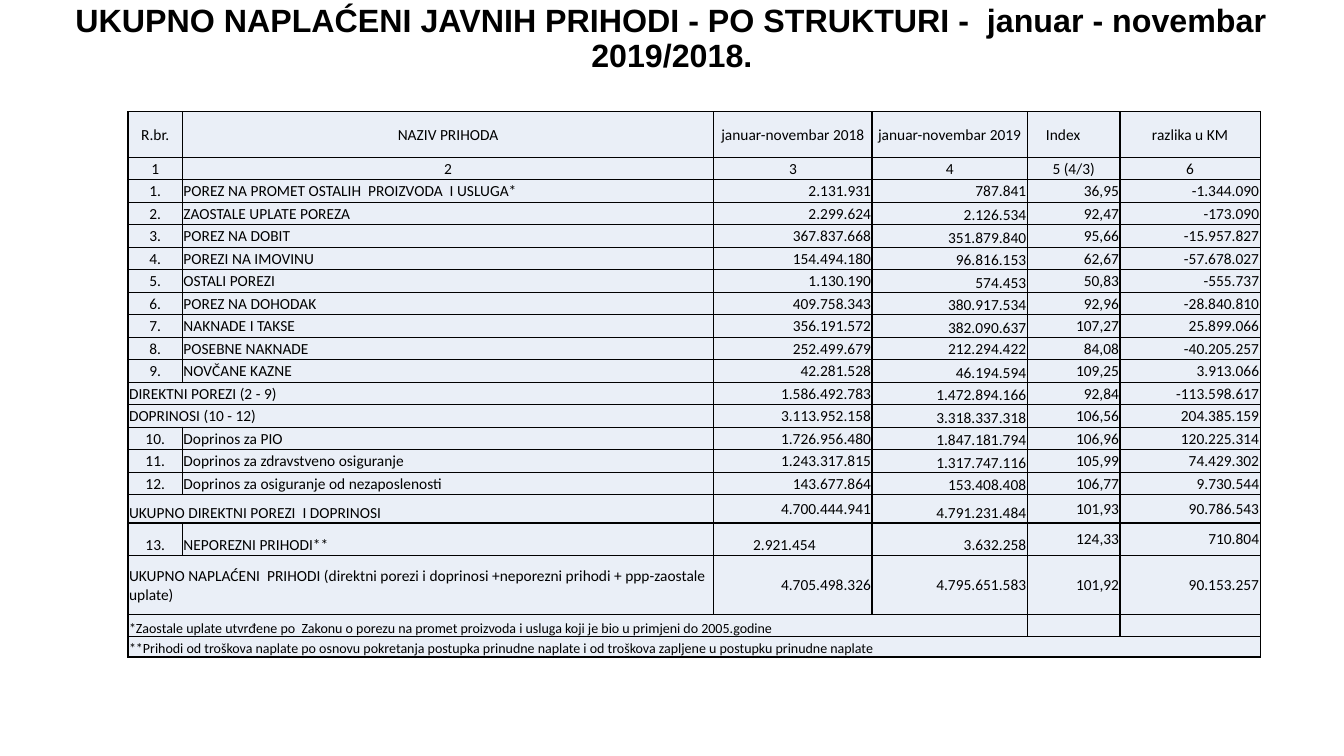
"""Build a slide with a table of public revenue by structure, 2019 against 2018."""
from dataclasses import dataclass
from typing import NamedTuple

from lxml import etree
from pptx import Presentation
from pptx.dml.color import RGBColor
from pptx.enum.text import MSO_ANCHOR, PP_ALIGN
from pptx.oxml.ns import qn
from pptx.util import Inches, Length, Pt

LEFT, MID, RIGHT = PP_ALIGN.LEFT, PP_ALIGN.CENTER, PP_ALIGN.RIGHT
CENTRE, BASE = MSO_ANCHOR.MIDDLE, MSO_ANCHOR.BOTTOM


@dataclass(frozen=True)
class Theme:
    ink: str = "000000"
    fill: str = "EAEFF7"
    head: str = "Arial"
    body: str = "Calibri"
    title: int = 23
    text: int = 11
    note: int = 10
    rule: int = 1


class Row(NamedTuple):
    texts: tuple[str, ...]
    low: tuple[int, ...] = (3,)
    span: int = 1
    high: float = 22.35
    size: int = 11


class Gap(NamedTuple):
    left: int
    right: int
    align: PP_ALIGN


THEME = Theme()
UNIT = Inches(0.01)
WIDE, HIGH = 1333, 750
COLS = (54, 527, 157, 154, 92, 139)
TITLE = "UKUPNO NAPLAĆENI JAVNIH PRIHODI - PO STRUKTURI -  januar - novembar 2019/2018."
GAPS = {(0, 4): Gap(1, 22, MID), (17, 2): Gap(39, 1, LEFT)}
ROWS = (
    Row(("R.br.", "NAZIV PRIHODA", "januar-novembar 2018", "januar-novembar 2019",
         "Index", "razlika u KM"), (), high=45),
    Row(("1", "2", "3", "4", "5 (4/3)", "6"), ()),
    Row(("1.", "POREZ NA PROMET OSTALIH  PROIZVODA  I USLUGA*",
         "2.131.931", "787.841", "36,95", "-1.344.090"), ()),
    Row(("2.", "ZAOSTALE UPLATE POREZA", "2.299.624", "2.126.534", "92,47", "-173.090")),
    Row(("3.", "POREZ NA DOBIT", "367.837.668", "351.879.840", "95,66", "-15.957.827")),
    Row(("4.", "POREZI NA IMOVINU", "154.494.180", "96.816.153", "62,67", "-57.678.027")),
    Row(("5.", "OSTALI POREZI", "1.130.190", "574.453", "50,83", "-555.737")),
    Row(("6.", "POREZ NA DOHODAK", "409.758.343", "380.917.534", "92,96", "-28.840.810")),
    Row(("7.", "NAKNADE I TAKSE", "356.191.572", "382.090.637", "107,27", "25.899.066")),
    Row(("8.", "POSEBNE NAKNADE", "252.499.679", "212.294.422", "84,08", "-40.205.257"), ()),
    Row(("9.", "NOVČANE KAZNE", "42.281.528", "46.194.594", "109,25", "3.913.066")),
    Row(("DIREKTNI POREZI (2 - 9)", "1.586.492.783", "1.472.894.166", "92,84",
         "-113.598.617"), span=2),
    Row(("DOPRINOSI (10 - 12)", "3.113.952.158", "3.318.337.318", "106,56",
         "204.385.159"), span=2),
    Row(("10.", "Doprinos za PIO", "1.726.956.480", "1.847.181.794", "106,96", "120.225.314")),
    Row(("11.", "Doprinos za zdravstveno osiguranje",
         "1.243.317.815", "1.317.747.116", "105,99", "74.429.302")),
    Row(("12.", "Doprinos za osiguranje od nezaposlenosti",
         "143.677.864", "153.408.408", "106,77", "9.730.544")),
    Row(("UKUPNO DIREKTNI POREZI  I DOPRINOSI", "4.700.444.941", "4.791.231.484",
         "101,93", "90.786.543"), (0, 3), 2, 28),
    Row(("13.", "NEPOREZNI PRIHODI**", "2.921.454", "3.632.258", "124,33", "710.804"),
        (0, 1, 2, 3), high=32),
    Row(("UKUPNO NAPLAĆENI  PRIHODI (direktni porezi i doprinosi +neporezni prihodi"
         " + ppp-zaostale uplate)", "4.705.498.326", "4.795.651.583", "101,92",
         "90.153.257"), (), 2, 59),
    Row(("*Zaostale uplate utvrđene po  Zakonu o porezu na promet proizvoda i usluga"
         " koji je bio u primjeni do 2005.godine", "", ""), (0,), 4, 22, THEME.note),
    Row(("**Prihodi od troškova naplate po osnovu pokretanja postupka prinudne naplate"
         " i od troškova zapljene u postupku prinudne naplate",), (0,), 6, 20, THEME.note),
)


def grid(count: float) -> Length:
    return Length(round(count * UNIT))


def style(para, font: str, size: int, align: PP_ALIGN, bold: bool = False) -> None:
    para.alignment = align
    for run in para.runs:
        run.font.name, run.font.size, run.font.bold = font, Pt(size), bold
        run.font.color.rgb = RGBColor.from_string(THEME.ink)


def frame(cell) -> None:
    props = cell._tc.get_or_add_tcPr()
    for side in ("a:lnL", "a:lnR", "a:lnT", "a:lnB"):
        line = etree.SubElement(props, qn(side), w=str(Pt(THEME.rule)))
        paint = etree.SubElement(line, qn("a:solidFill"))
        etree.SubElement(paint, qn("a:srgbClr"), val=THEME.ink)
    cell.fill.solid()
    cell.fill.fore_color.rgb = RGBColor.from_string(THEME.fill)


def side(line: int, col: int, span: int) -> PP_ALIGN:
    if line < 2 or (col == 0 and span == 1):
        return MID
    return LEFT if col < 2 else RIGHT


def write(cell, text: str, line: int, col: int, row: Row) -> None:
    gap = GAPS.get((line, col), Gap(1, 1, side(line, col, row.span)))
    cell.margin_left, cell.margin_right = grid(gap.left), grid(gap.right)
    cell.margin_top, cell.margin_bottom = grid(1), 0
    cell.vertical_anchor = BASE if col in row.low else CENTRE
    cell.text_frame.text = text
    para = cell.text_frame.paragraphs[0]
    style(para, THEME.body, row.size, gap.align)
    if not text:
        etree.SubElement(para._p, qn("a:endParaRPr"), sz=str(row.size * 100))


def add_title(slide) -> None:
    box = slide.shapes.add_textbox(grid(26), grid(11), grid(1281), grid(56))
    box.text_frame.word_wrap = True
    box.text_frame.vertical_anchor = CENTRE
    box.text_frame.text = TITLE
    para = box.text_frame.paragraphs[0]
    para.line_spacing = 0.9
    style(para, THEME.head, THEME.title, MID, True)


def add_grid(slide) -> None:
    high = sum(row.high for row in ROWS)
    table = slide.shapes.add_table(len(ROWS), len(COLS), grid(127), grid(111),
                                   grid(sum(COLS)), grid(high)).table
    table.first_row = table.horz_banding = False
    for col, wide in zip(table.columns, COLS):
        col.width = grid(wide)
    for line, row in enumerate(ROWS):
        table.rows[line].height = grid(row.high)
        texts = row.texts[:1] + ("",) * (row.span - 1) + row.texts[1:]
        for col, text in enumerate(texts):
            cell = table.cell(line, col)
            frame(cell)
            write(cell, text, line, col, row)
        if row.span > 1:
            table.cell(line, 0).merge(table.cell(line, row.span - 1))


def main() -> None:
    deck = Presentation()
    deck.slide_width, deck.slide_height = grid(WIDE), grid(HIGH)
    slide = deck.slides.add_slide(deck.slide_layouts[6])
    add_title(slide)
    add_grid(slide)
    deck.save("out.pptx")


if __name__ == "__main__":
    main()
